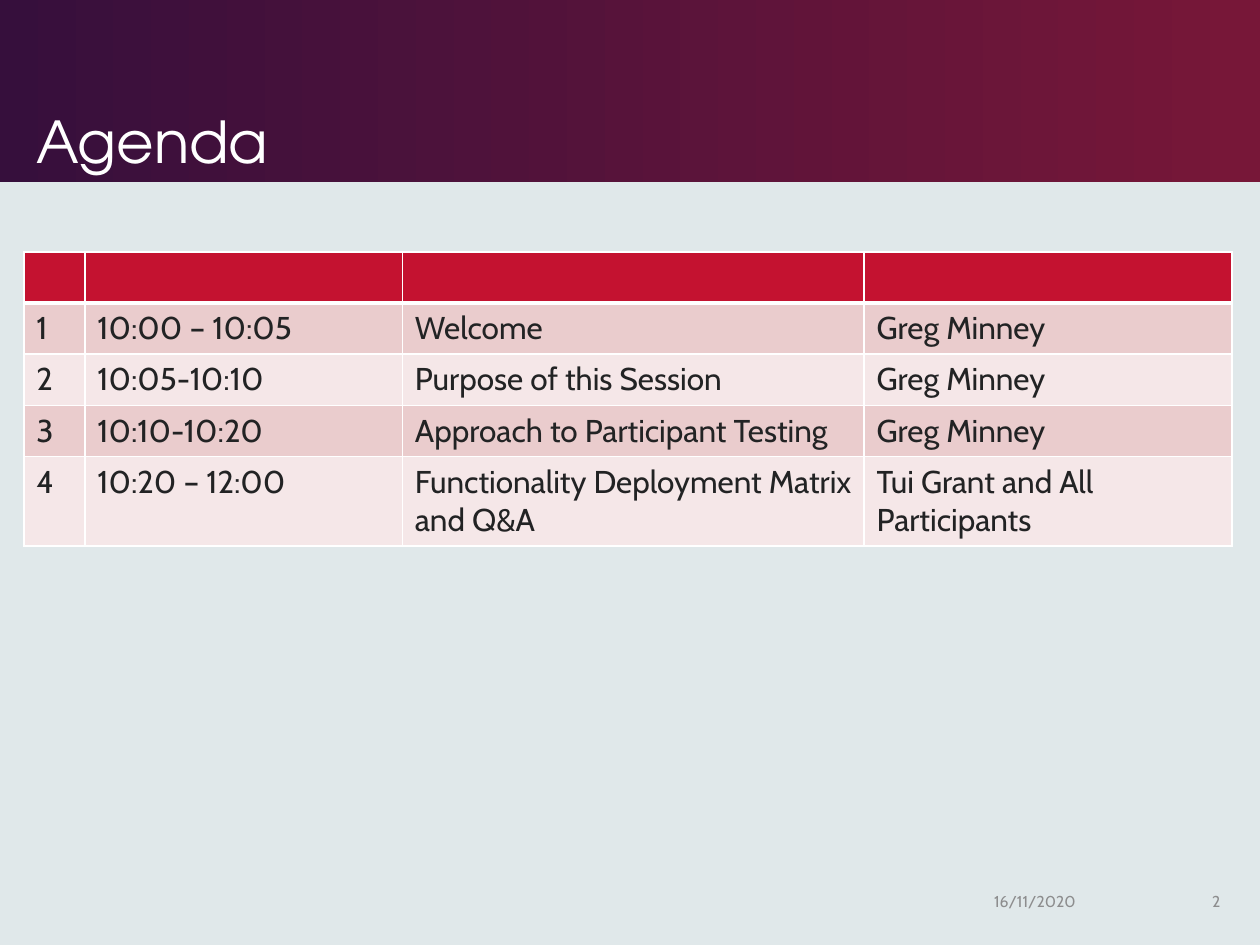
from lxml import etree
from pptx import Presentation, util as u
from pptx.dml.color import RGBColor
from pptx.enum import shapes, text
from pptx.oxml.ns import qn

TITLE = "Agenda"
ROWS = [
    ("", "", "", ""),
    ("1", "10:00 – 10:05", "Welcome", "Greg Minney"),
    ("2", "10:05-10:10", "Purpose of this Session", "Greg Minney"),
    ("3", "10:10-10:20", "Approach to Participant Testing", "Greg Minney"),
    ("4", "10:20 – 12:00", "Functionality Deployment Matrix and Q&A",
     "Tui Grant and All Participants"),
]
WIDTHS = (1.23, 6.4, 9.31, 7.42)
HIGH = 1.03
FOOT = [
    ("16/11/2020", 19.79, 3.6, text.PP_ALIGN.LEFT),
    ("2", 23.65, 1.2, text.PP_ALIGN.RIGHT),
]
THEME = {
    "back": "E0E8EA", "from": "360F3C", "to": "771738",
    "head": "C41230", "bands": ("EACCCD", "F5E7E8"),
    "white": "FFFFFF", "ink": "222324", "grey": "8D8D8E",
    "display": "TeX Gyre Adventor", "body": "Cabin",
    "title": 33, "cell": 18, "foot": 9,
}


def color(key):
    return RGBColor.from_string(THEME.get(key, key))


def style(para, face, size, ink):
    para.font.name = THEME[face]
    para.font.size = u.Pt(THEME[size])
    para.font.color.rgb = color(ink)


def place(shape, left, top, width, height):
    shape.left, shape.top = u.Cm(left), u.Cm(top)
    shape.width, shape.height = u.Cm(width), u.Cm(height)


def border(cell, under):
    props = cell._tc.get_or_add_tcPr()
    for side, wide in (("L", 1), ("R", 1), ("T", 1), ("B", under)):
        line = etree.SubElement(props, qn(f"a:ln{side}"), w=str(u.Pt(wide)))
        fill = etree.SubElement(line, qn("a:solidFill"))
        etree.SubElement(fill, qn("a:srgbClr"), val=THEME["white"])


def add_head(slide):
    band = slide.shapes.add_shape(
        shapes.MSO_SHAPE.RECTANGLE, 0, 0, u.Cm(25.4), u.Cm(3.68))
    band.shadow.inherit = False
    band.line.fill.background()
    band.fill.gradient()
    band.fill.gradient_angle = 0
    for stop, key, spot in zip(band.fill.gradient_stops, ("from", "to"), (0, 0.99)):
        stop.color.rgb = color(key)
        stop.position = spot
    slide.shapes.element.insert(2, band.element)

    title = slide.shapes.title
    place(title, 0.48, 0.38, 18.75, 3.3)
    frame = title.text_frame
    frame.text = TITLE
    frame.auto_size = text.MSO_AUTO_SIZE.NONE
    frame.vertical_anchor = text.MSO_ANCHOR.BOTTOM
    para = frame.paragraphs[0]
    para.alignment = text.PP_ALIGN.LEFT
    para.line_spacing = 0.9
    style(para, "display", "title", "white")


def add_agenda(slide):
    table = slide.shapes.add_table(
        len(ROWS), len(WIDTHS), u.Cm(0.48), u.Cm(5.08),
        u.Cm(sum(WIDTHS)), u.Cm(HIGH * len(ROWS))).table
    for col, width in zip(table.columns, WIDTHS):
        col.width = u.Cm(width)
    for r, row in enumerate(ROWS):
        table.rows[r].height = u.Cm(HIGH)
        for c, words in enumerate(row):
            cell = table.cell(r, c)
            cell.text = words
            border(cell, 1 if r else 3)
            cell.fill.solid()
            cell.fill.fore_color.rgb = color(
                THEME["bands"][(r - 1) % 2] if r else "head")
            para = cell.text_frame.paragraphs[0]
            style(para, "body", "cell", "ink")
            para.font.bold = False


def add_foot(slide):
    for words, left, width, align in FOOT:
        box = slide.shapes.add_textbox(
            u.Cm(left), u.Cm(17.65), u.Cm(width), u.Cm(1.02))
        frame = box.text_frame
        frame.word_wrap = True
        frame.vertical_anchor = text.MSO_ANCHOR.MIDDLE
        frame.text = words
        para = frame.paragraphs[0]
        para.alignment = align
        style(para, "body", "foot", "grey")


def main():
    deck = Presentation()
    deck.slide_width, deck.slide_height = u.Cm(25.4), u.Cm(19.05)
    slide = deck.slides.add_slide(deck.slide_layouts[5])
    slide.background.fill.solid()
    slide.background.fill.fore_color.rgb = color("back")
    add_head(slide)
    add_agenda(slide)
    add_foot(slide)
    deck.save("out.pptx")


if __name__ == "__main__":
    main()
